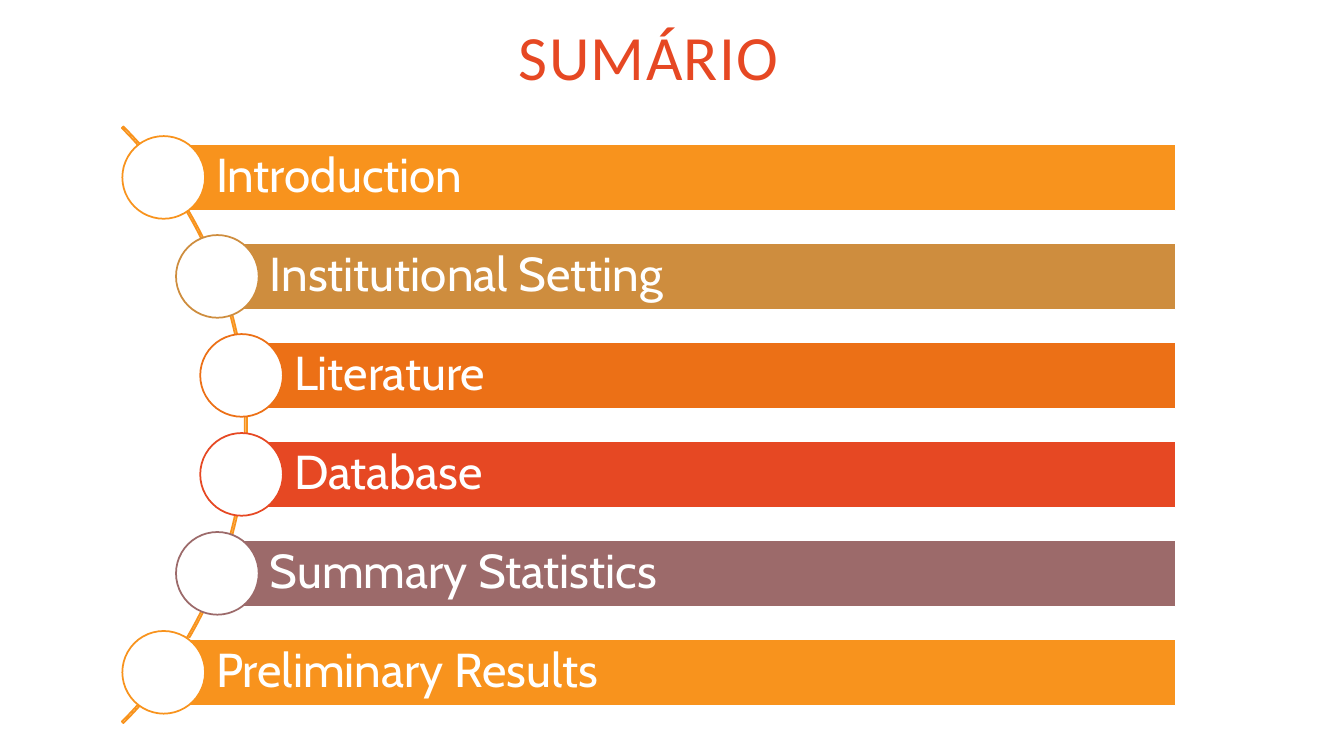
from math import sqrt

from pptx import Presentation
from pptx.dml.color import RGBColor
from pptx.enum.shapes import MSO_SHAPE as Shape
from pptx.enum.text import MSO_ANCHOR as Anchor, PP_ALIGN as Align
from pptx.util import Inches, Pt

TITLE = "SUMÁRIO"
TOPICS = [
    ("Introduction", "amber"),
    ("Institutional Setting", "tan"),
    ("Literature", "orange"),
    ("Database", "red"),
    ("Summary Statistics", "mauve"),
    ("Preliminary Results", "amber"),
]
COLORS = {
    "amber": "F8931D",
    "tan": "CE8D3E",
    "orange": "EC7016",
    "red": "E64823",
    "mauve": "9C6A6A",
    "white": "FFFFFF",
}

# Inches
WIDTH, HEIGHT = 13.33, 7.5
MID_X, MID_Y = -1.735, 4.215  # centre of the arc
ARC = 8.37                    # diameter of the arc
ORBIT = 4.16                  # from the arc's centre to each circle's centre
PITCH = 0.982                 # from one row to the next
BAR, DOT = 0.66, 0.82
RIGHT = 11.66


def color(name):
    return RGBColor.from_string(COLORS[name])


def draw(slide, kind, box, line, fill=None):
    shape = slide.shapes.add_shape(kind, *map(Inches, box))
    shape.shadow.inherit = False
    if fill:
        shape.fill.solid()
        shape.fill.fore_color.rgb = color(fill)
    else:
        shape.fill.background()
    shape.line.color.rgb = color(line)
    shape.line.width = Pt(1.25)
    return shape


def write(frame, text, font, size, tint, align, spacing):
    frame.vertical_anchor = Anchor.MIDDLE
    frame.word_wrap = True
    para = frame.paragraphs[0]
    para.alignment, para.line_spacing = align, spacing
    run = para.add_run()
    run.text = text
    run.font.name, run.font.size = font, Pt(size)
    run.font.color.rgb = color(tint)
    return run


def add_title(slide):
    title = slide.shapes.title
    title.left, title.top = Inches(1.12), Inches(0.39)
    title.width, title.height = Inches(10.63), Inches(0.46)
    run = write(title.text_frame, TITLE, "Calibri", 45, "red", Align.CENTER, 0.8)
    run.font._element.set("spc", "100")


def add_arc(slide):
    box = (MID_X - ARC / 2, MID_Y - ARC / 2, ARC, ARC)
    arc = draw(slide, Shape.BLOCK_ARC, box, "amber")
    for i, value in enumerate((189, 27, 0.0026)):
        arc.adjustments[i] = value


def add_topic(slide, row, text, tint):
    """Draw a bar that starts at the centre of its circle on the orbit."""
    rise = (row - (len(TOPICS) - 1) / 2) * PITCH
    x, y = MID_X + sqrt(ORBIT ** 2 - rise ** 2), MID_Y + rise
    bar = draw(slide, Shape.RECTANGLE, (x, y - BAR / 2, RIGHT - x, BAR), "white", tint)
    frame = bar.text_frame
    frame.margin_left = Inches(0.52)
    frame.margin_top = frame.margin_right = frame.margin_bottom = Inches(0.09)
    write(frame, text, "Cabin", 34, "white", Align.LEFT, 0.9)
    draw(slide, Shape.OVAL, (x - DOT / 2, y - DOT / 2, DOT, DOT), tint, "white")


def main():
    deck = Presentation()
    deck.slide_width, deck.slide_height = Inches(WIDTH), Inches(HEIGHT)
    slide = deck.slides.add_slide(deck.slide_layouts[5])
    add_title(slide)
    add_arc(slide)
    for row, (text, tint) in enumerate(TOPICS):
        add_topic(slide, row, text, tint)
    deck.save("out.pptx")


if __name__ == "__main__":
    main()
